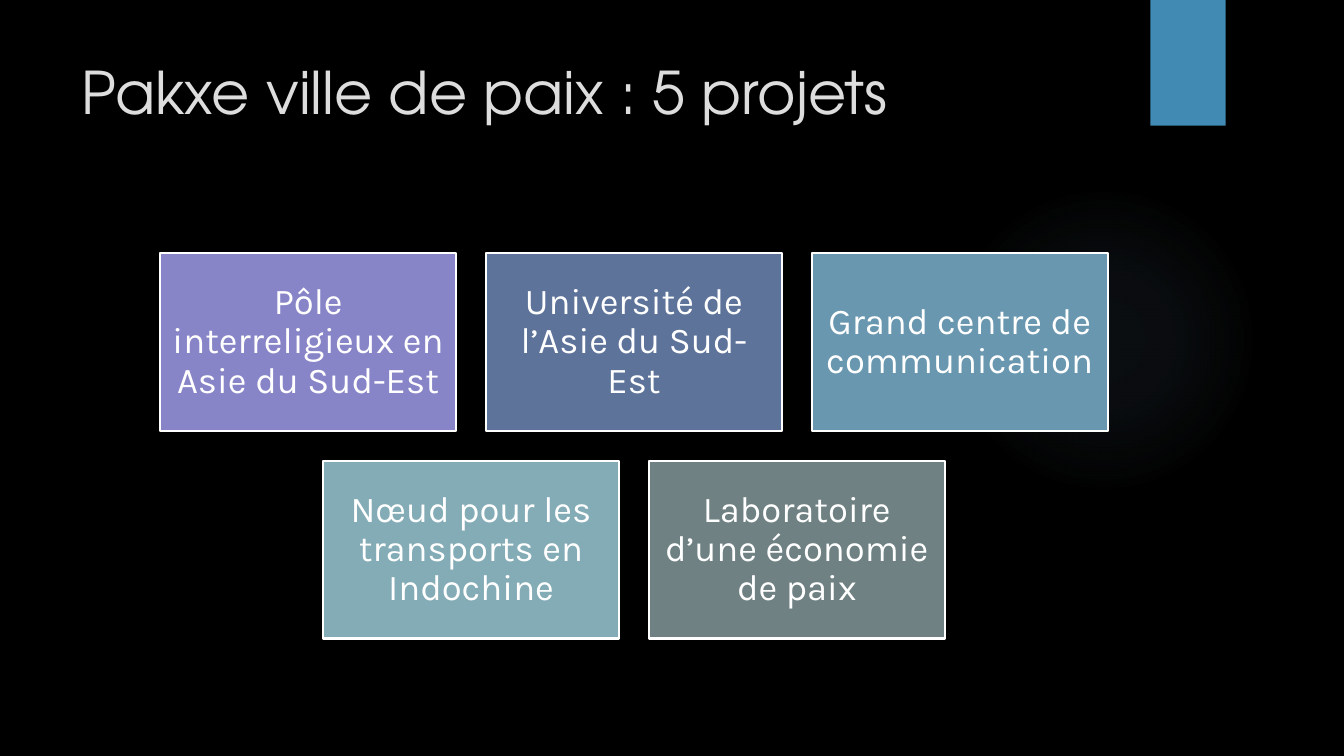
import pptx
import pptx.util
import pptx.dml.color
import pptx.enum.shapes
import pptx.enum.text
import pptx.oxml
import pptx.oxml.ns

Cm, Pt = pptx.util.Cm, pptx.util.Pt
SHAPE = pptx.enum.shapes.MSO_SHAPE
ANCHOR = pptx.enum.text.MSO_ANCHOR
ALIGN = pptx.enum.text.PP_ALIGN


def rgb(value):
    return pptx.dml.color.RGBColor.from_string(value)


class Deck:
    title_font, body_font = "TeX Gyre Adventor", "Karla"
    title_color, body_color = "DDDDDD", "FFFFFF"

    def __init__(self):
        self.file = pptx.Presentation()
        self.file.slide_width, self.file.slide_height = Cm(33.87), Cm(19.05)
        self.slide = self.file.slides.add_slide(self.file.slide_layouts[6])
        background = self.slide.background.fill
        background.solid()
        background.fore_color.rgb = rgb("000000")

    def shape(self, kind, left, top, width, height, color):
        shape = self.slide.shapes.add_shape(
            kind, Cm(left), Cm(top), Cm(width), Cm(height))
        shape.shadow.inherit = False
        shape.fill.solid()
        shape.fill.fore_color.rgb = rgb(color)
        shape.line.fill.background()
        return shape

    def glow(self, left, top, size, color, stops):
        """Circle fading outwards; stops are (position %, opacity %)."""
        circle = self.shape(SHAPE.OVAL, left, top, size, size, color)
        marks = "".join(
            f'<a:gs pos="{position * 1000}"><a:srgbClr val="{color}">'
            f'<a:alpha val="{opacity * 1000}"/></a:srgbClr></a:gs>'
            for position, opacity in stops)
        gradient = pptx.oxml.parse_xml(
            f'<a:gradFill {pptx.oxml.ns.nsdecls("a")}><a:gsLst>{marks}</a:gsLst>'
            '<a:path path="circle"><a:fillToRect l="50000" t="50000" '
            'r="50000" b="50000"/></a:path></a:gradFill>')
        properties = circle._element.spPr
        properties.replace(properties.find(pptx.oxml.ns.qn("a:solidFill")), gradient)

    def set_text(self, frame, text, font, size, color):
        frame.word_wrap = True
        paragraph = frame.paragraphs[0]
        paragraph.text = text
        paragraph.font.name = font
        paragraph.font.size = Pt(size)
        paragraph.font.color.rgb = rgb(color)
        return paragraph

    def title(self, text, left, top, width, height):
        box = self.slide.shapes.add_textbox(Cm(left), Cm(top), Cm(width), Cm(height))
        self.set_text(box.text_frame, text, self.title_font, 42, self.title_color)

    def tile(self, text, left, top, width, height, color):
        tile = self.shape(SHAPE.RECTANGLE, left, top, width, height, color)
        tile.line.color.rgb = rgb(self.body_color)
        tile.line.width = Pt(1.5)
        frame = tile.text_frame
        frame.vertical_anchor = ANCHOR.MIDDLE
        frame.margin_left = frame.margin_right = Cm(0.28)
        frame.margin_top = frame.margin_bottom = Cm(0.28)
        label = self.set_text(frame, text, self.body_font, 26, self.body_color)
        label.alignment = ALIGN.CENTER
        label.line_spacing = 0.9
        label.space_after = Pt(11)


def main():
    deck = Deck()

    # Backdrop
    deck.glow(23.9, 4.65, 7.82, "8ABAD4", [(0, 7), (36, 6), (69, 0)])
    deck.shape(SHAPE.RECTANGLE, 28.99, 0, 1.9, 3.17, "418AB3")

    # Heading
    deck.title("Pakxe ville de paix : 5 projets", 1.8, 1.27, 26.14, 3.89)

    # Project tiles, each row centred on the same axis
    project_rows = [
        [("Pôle interreligieux en Asie du Sud-Est", "8784C7"),
         ("Université de l’Asie du Sud-Est", "5D739A"),
         ("Grand centre de communication", "6997AF")],
        [("Nœud pour les transports en Indochine", "84ACB6"),
         ("Laboratoire d’une économie de paix", "6F8183")],
    ]
    width, height, gap = 7.46, 4.48, 0.75
    axis, first_top = 15.98, 6.38
    for row, projects in enumerate(project_rows):
        row_width = len(projects) * (width + gap) - gap
        for column, (project, color) in enumerate(projects):
            deck.tile(project, axis - row_width / 2 + column * (width + gap),
                      first_top + row * (height + gap), width, height, color)

    deck.file.save("out.pptx")


if __name__ == "__main__":
    main()
